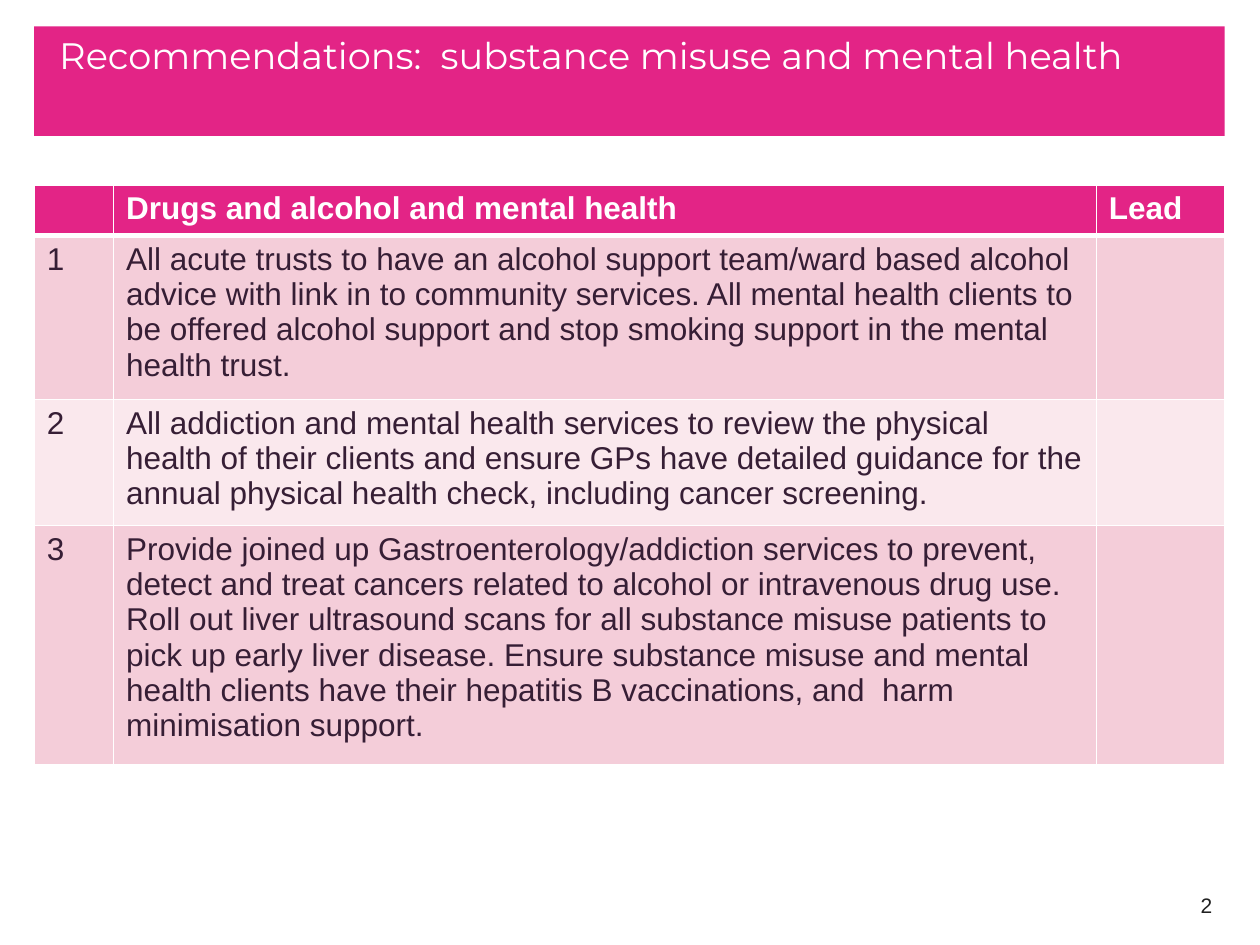
from dataclasses import dataclass

from lxml import etree
from pptx import Presentation
from pptx.dml.color import RGBColor
from pptx.enum.text import MSO_ANCHOR, MSO_AUTO_SIZE, PP_ALIGN
from pptx.oxml.ns import qn
from pptx.util import Cm, Pt

LEFT, RIGHT = PP_ALIGN.LEFT, PP_ALIGN.RIGHT
TOP, MIDDLE = MSO_ANCHOR.TOP, MSO_ANCHOR.MIDDLE
NO_FIT = MSO_AUTO_SIZE.NONE
TITLE_ONLY = 5


@dataclass(frozen=True)
class Theme:
    pink: str = "E32486"
    rose: str = "F4CDD9"
    blush: str = "FAE8ED"
    white: str = "FFFFFF"
    plum: str = "361E35"
    dark: str = "202020"
    head_font: str = "Montserrat"
    body_font: str = "Arial"
    head_size: int = 21
    body_size: int = 18
    note_size: int = 12
    thin: int = 1
    thick: int = 3


class Deck:
    """Holds the theme and the current slide."""

    def __init__(self, theme, width, height):
        self.theme = theme
        self.prs = Presentation()
        self.prs.slide_width, self.prs.slide_height = Cm(width), Cm(height)
        self.slide = self.prs.slides.add_slide(
            self.prs.slide_layouts[TITLE_ONLY])

    def style(self, item, values):
        for name, value in values.items():
            setattr(item, name, value)

    def label(self, frame, text, color, size, font, bold=False, align=LEFT):
        para = frame.paragraphs[0]
        para.alignment = align
        run = para.add_run()
        run.text = text
        self.style(run.font, {"size": Pt(size), "name": font, "bold": bold})
        run.font.color.rgb = RGBColor.from_string(color)
        return para

    def paint(self, item, color):
        item.fill.solid()
        item.fill.fore_color.rgb = RGBColor.from_string(color)

    def title(self, text, left, top, width, height):
        t, shape = self.theme, self.slide.shapes.title
        self.style(shape, {"left": Cm(left), "top": Cm(top),
                           "width": Cm(width), "height": Cm(height)})
        self.paint(shape, t.pink)
        frame = shape.text_frame
        self.style(frame, {"vertical_anchor": TOP, "word_wrap": True,
                           "auto_size": NO_FIT})
        para = self.label(frame, text, t.white, t.head_size, t.head_font)
        para.space_before = Pt(6)
        para._p.get_or_add_pPr().set("marL", str(Cm(0.25)))

    def number(self, text, left, top, width, height):
        t = self.theme
        box = self.slide.shapes.add_textbox(
            Cm(left), Cm(top), Cm(width), Cm(height))
        self.style(box.text_frame, {"vertical_anchor": MIDDLE,
                                    "word_wrap": True})
        self.label(box.text_frame, text, t.dark, t.note_size, t.body_font,
                   align=RIGHT)

    def border(self, cell, widths):
        props = cell._tc.get_or_add_tcPr()
        for place, (side, width) in enumerate(widths.items()):
            line = etree.Element(qn(f"a:ln{side}"), w=str(Pt(width)))
            fill = etree.SubElement(line, qn("a:solidFill"))
            etree.SubElement(fill, qn("a:srgbClr"), val=self.theme.white)
            props.insert(place, line)

    def table(self, rows, left, top, widths, heights):
        t = self.theme
        grid = self.slide.shapes.add_table(
            len(rows), len(widths), Cm(left), Cm(top),
            Cm(sum(widths)), Cm(sum(heights))).table
        for col, width in zip(grid.columns, widths):
            col.width = Cm(width)
        for r, (row, height) in enumerate(zip(rows, heights)):
            grid.rows[r].height = Cm(height)
            head = r == 0
            fill = t.pink if head else (t.blush, t.rose)[r % 2]
            # The rule under the header row is heavier than the rest
            lines = {"L": t.thin, "R": t.thin,
                     "T": t.thick if r == 1 else t.thin,
                     "B": t.thick if head else t.thin}
            for c, text in enumerate(row):
                cell = grid.cell(r, c)
                self.paint(cell, fill)
                self.border(cell, lines)
                if text:
                    self.label(cell.text_frame, text,
                               t.white if head else t.plum,
                               t.body_size, t.body_font, bold=head)


ADVICE = [
    "All acute trusts to have an alcohol support team/ward based alcohol "
    "advice with link in to community services. All mental health clients "
    "to be offered alcohol support and stop smoking support in the mental "
    "health trust.",
    "All addiction and mental health services to review the physical health "
    "of their clients and ensure GPs have detailed guidance for the annual "
    "physical health check, including cancer screening.",
    "Provide joined up Gastroenterology/addiction services to prevent, "
    "detect and treat cancers related to alcohol or intravenous drug use.  "
    "Roll out liver ultrasound scans for all substance misuse patients to "
    "pick up early liver disease. Ensure substance misuse and mental health "
    "clients have their hepatitis B vaccinations, and  harm minimisation "
    "support.",
]


def main():
    deck = Deck(Theme(), 25.4, 19.05)
    edge = 0.69

    # Title band
    deck.title("Recommendations:  substance misuse and mental health",
               edge, 0.53, 24, 2.21)

    # Slide number
    deck.number("2", 18.77, 17.73, 5.92, 1.02)

    # Recommendations table
    rows = [("", "Drugs and alcohol and mental health", "Lead")]
    rows += [(str(n), text, "") for n, text in enumerate(ADVICE, 1)]
    deck.table(rows, edge, 3.73, [1.6, 19.81, 2.59], [0.99, 2.24, 2.24, 3.56])

    deck.prs.save("out.pptx")


if __name__ == "__main__":
    main()
